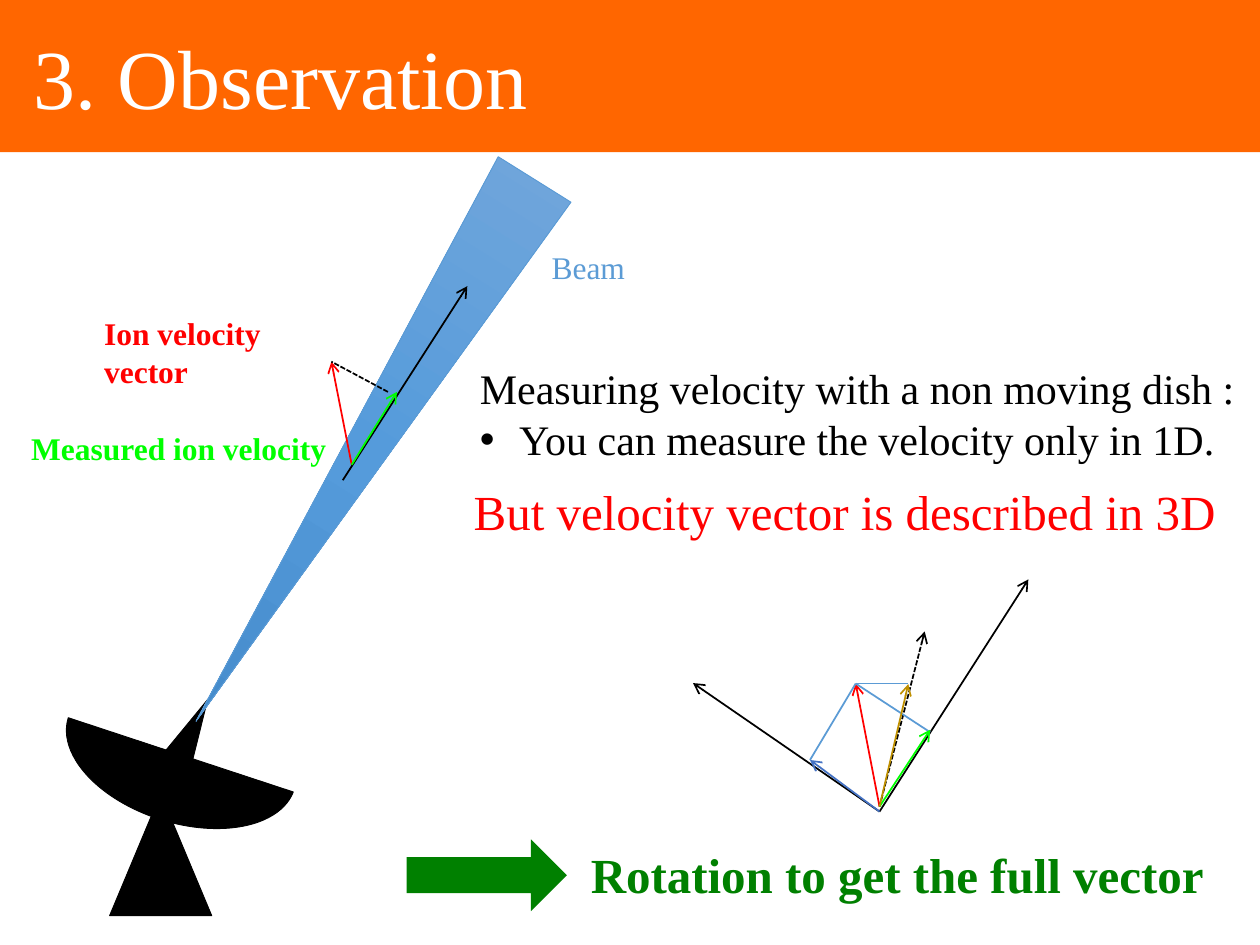
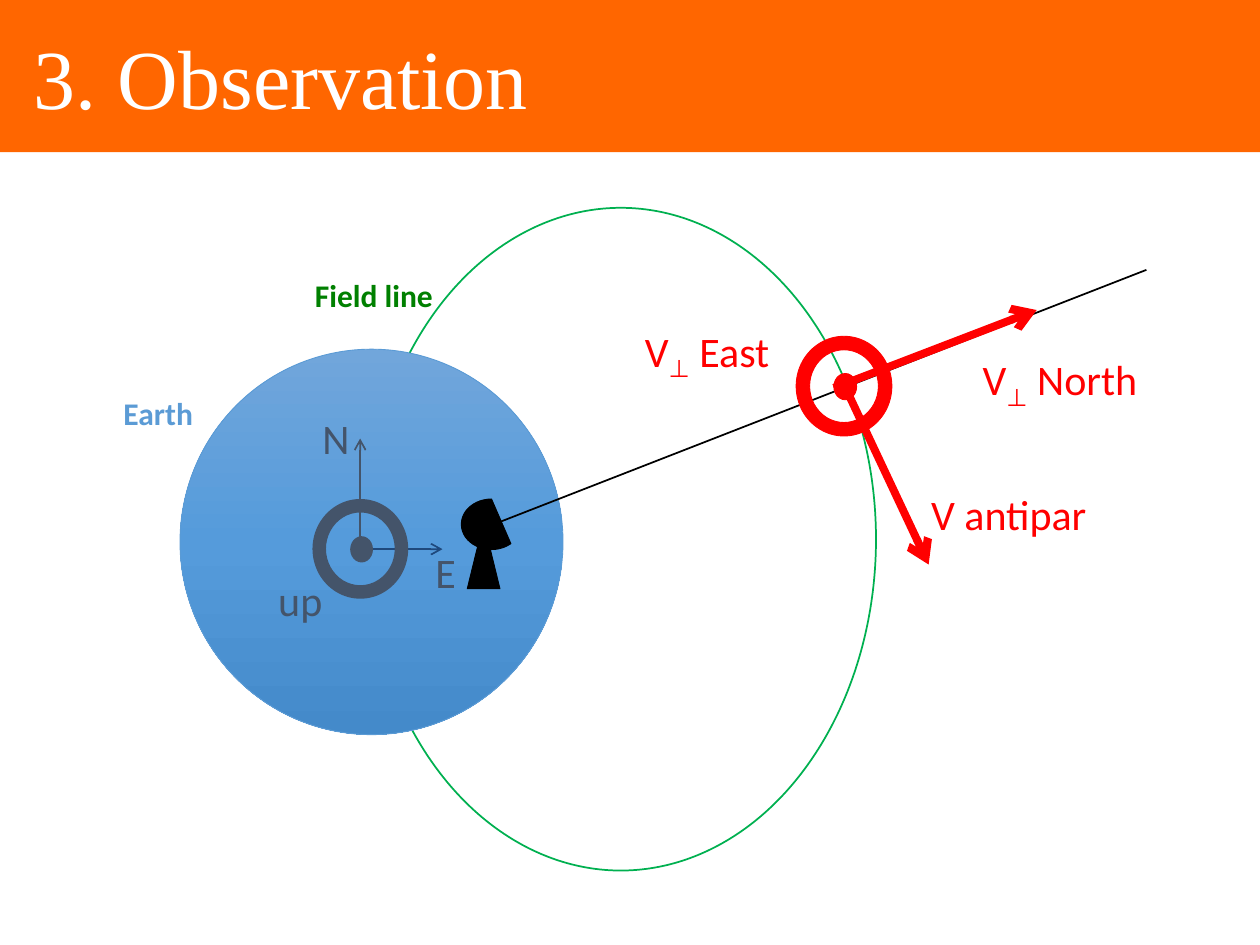
import copy

import pptx
import pptx.dml.color
import pptx.enum.dml
import pptx.enum.shapes
import pptx.enum.text
import pptx.oxml.ns
import pptx.util
from lxml import etree

Cm, Pt = pptx.util.Cm, pptx.util.Pt
Shape = pptx.enum.shapes.MSO_SHAPE
AutoSize = pptx.enum.text.MSO_AUTO_SIZE
qn = pptx.oxml.ns.qn

COLOURS = {
    "band": "FF6600", "white": "FFFFFF", "black": "000000",
    "red": "FF0000", "lime": "00FF00", "green": "008000",
    "field": "00B050", "sky": "5B9BD5", "gold": "BF9000",
    "blue": "4472C4", "slate": "44546A", "navy": "1F497D",
}
SKY_GRADIENT = ("71A6DB", "559BDB", "448ACA")
SERIF, SANS = "Times New Roman", "Calibri"


def rgb(colour):
    return pptx.dml.color.RGBColor.from_string(COLOURS.get(colour, colour))


def place(shape, left, top, width, height):
    shape.left, shape.top = Cm(left), Cm(top)
    shape.width, shape.height = Cm(width), Cm(height)


def set_font(paragraph, size, colour, face, bold=False):
    font = paragraph.font
    font.size, font.name, font.bold = Pt(size), face, bold
    font.color.rgb = rgb(colour)


def add_title(slide, text):
    """Title placeholder drawn as the full-width band."""
    title = slide.shapes.title
    place(title, 0, 0, 25.4, 3.07)
    title.fill.solid()
    title.fill.fore_color.rgb = rgb("band")
    frame = title.text_frame
    frame.text = text
    frame.margin_left = Cm(0.68)
    frame.auto_size = AutoSize.NONE
    frame.vertical_anchor = pptx.enum.text.MSO_ANCHOR.MIDDLE
    frame.paragraphs[0].alignment = pptx.enum.text.PP_ALIGN.LEFT
    set_font(frame.paragraphs[0], 48, "white", SERIF)


def add_list(slide, lead, points, box, size):
    """Body placeholder with an unbulleted lead line above its points."""
    body = slide.placeholders[1]
    place(body, *box)
    frame = body.text_frame
    frame.text = "\n".join([lead, *points])
    frame.auto_size = AutoSize.NONE
    for number, paragraph in enumerate(frame.paragraphs):
        indent = Cm(0.79) if number else 0
        properties = paragraph._p.get_or_add_pPr()
        properties.set("marL", str(indent))
        properties.set("indent", str(-indent))
        if not number:
            etree.SubElement(properties, qn("a:buNone"))
        paragraph.space_before = Pt(0)
        set_font(paragraph, size, "black", SERIF)


def add_label(slide, text, left, top, width, colour, size, face, bold=False):
    """One-line label; in a tuple every second part is a subscript."""
    height = Pt(size * 1.2) + Cm(0.25)
    box = slide.shapes.add_textbox(Cm(left), Cm(top), Cm(width), height)
    box.text_frame.word_wrap = False
    box.text_frame.auto_size = AutoSize.SHAPE_TO_FIT_TEXT
    paragraph = box.text_frame.paragraphs[0]
    parts = (text,) if isinstance(text, str) else text
    for number, part in enumerate(parts):
        run = paragraph.add_run()
        run.text = part
        if number % 2:
            run._r.get_or_add_rPr().set("baseline", "-25000")
    set_font(paragraph, size, colour, face, bold)


def add_figure(slide, kind, box, fill=None, outline=None, weight=0.5,
               rotation=0, adjustments=()):
    figure = slide.shapes.add_shape(kind, *(Cm(length) for length in box))
    figure.shadow.inherit = False
    figure.rotation = rotation
    for number, value in enumerate(adjustments):
        figure.adjustments[number] = value
    if fill == SKY_GRADIENT:
        fill_with_gradient(figure)
    elif fill:
        figure.fill.solid()
        figure.fill.fore_color.rgb = rgb(fill)
    else:
        figure.fill.background()
    if outline:
        figure.line.color.rgb = rgb(outline)
        figure.line.width = Pt(weight)
    else:
        figure.line.fill.background()


def fill_with_gradient(figure):
    figure.fill.gradient()
    figure.fill.gradient_angle = 270
    stops = figure._element.spPr.find(".//" + qn("a:gsLst"))
    stops.append(copy.deepcopy(stops[-1]))
    for number, stop in enumerate(figure.fill.gradient_stops):
        stop.position = number / 2
        stop.color.rgb = rgb(SKY_GRADIENT[number])


def add_line(slide, start, end, colour, arrow=False, dashed=False, weight=1):
    line = slide.shapes.add_connector(
        pptx.enum.shapes.MSO_CONNECTOR.STRAIGHT,
        *(Cm(length) for length in (*start, *end)))
    line.line.color.rgb = rgb(colour)
    line.line.width = Pt(weight)
    if dashed:
        line.line.dash_style = pptx.enum.dml.MSO_LINE.SQUARE_DOT
    if arrow:
        etree.SubElement(line.line._get_or_add_ln(), qn("a:tailEnd"), type="arrow")
    etree.SubElement(line._element.spPr, qn("a:effectLst"))


def add_outward_symbol(slide, left, top, colour, outline=None):
    """Ring and dot: a vector pointing out of the page."""
    add_figure(slide, Shape.DONUT, (left, top, 1.93, 2.01), colour, outline,
               adjustments=[0.141])
    add_figure(slide, Shape.OVAL, (left + 0.76, top + 0.75, 0.46, 0.53),
               colour, outline)


def build_dish_slide(slide):
    add_title(slide, "3. Observation")
    add_list(slide, "Measuring velocity with a non moving dish :",
             ["You can measure the velocity only in 1D."],
             (9.42, 7.19, 15.85, 2.31), 24)

    # Dish and beam
    add_figure(slide, Shape.ISOSCELES_TRIANGLE, (2.21, 16, 2.06, 2.46),
               "black", "black")
    add_figure(slide, Shape.ISOSCELES_TRIANGLE, (3.33, 14, 0.86, 1.9),
               "black", "black", rotation=26.7)
    add_figure(slide, Shape.CHORD, (2.26, 12.8, 2.79, 4.78), "black", "black",
               rotation=287.6, adjustments=[54.8, 162])
    add_figure(slide, Shape.FLOWCHART_MERGE, (6.5, 2.64, 1.73, 12.88),
               SKY_GRADIENT, "sky", rotation=32)

    # Ion velocity and its measured part along the beam
    ion, ion_tip = (7.09, 9.37), (6.68, 7.29)
    add_line(slide, ion, ion_tip, "red", arrow=True)
    add_line(slide, (6.91, 9.68), (9.42, 5.77), "black", arrow=True)
    add_line(slide, (7.82, 7.9), ion_tip, "black", dashed=True)
    add_line(slide, ion, (8, 7.9), "lime", arrow=True)
    add_label(slide, "Ion velocity vector", 1.85, 6.2, 5.5, "red", 18, SERIF, True)
    add_label(slide, "Beam", 10.87, 4.88, 2.01, "sky", 18, SERIF)
    add_label(slide, "Measured ion velocity", 0.38, 8.53, 6.53, "lime", 18, SERIF, True)

    # Vector split along three axes
    origin, axis_origin = (17.73, 16.26), (17.73, 16.36)
    vector_tip, left_tip = (17.25, 13.78), (16.33, 15.32)
    add_line(slide, origin, vector_tip, "red", arrow=True)
    for axis_tip in ((20.73, 11.68), (13.97, 13.77)):
        add_line(slide, axis_origin, axis_tip, "black", arrow=True)
    add_line(slide, origin, (18.64, 12.73), "black", arrow=True, dashed=True)
    for projection in (left_tip, (18.75, 14.76), (18.31, 13.78)):
        add_line(slide, vector_tip, projection, "sky")
    add_line(slide, origin, (18.75, 14.71), "lime", arrow=True)
    add_line(slide, origin, (18.31, 13.79), "gold", arrow=True)
    add_line(slide, axis_origin, left_tip, "blue", arrow=True)

    # Conclusion
    add_label(slide, "But velocity vector is described in 3D",
              9.3, 9.58, 15.62, "red", 28, SERIF)
    add_figure(slide, Shape.RIGHT_ARROW, (8.2, 16.92, 3.23, 1.45), "green")
    add_label(slide, "Rotation to get the full vector",
              11.66, 16.89, 13.23, "green", 28, SERIF, True)


def build_earth_slide(slide):
    add_title(slide, "3. Observation")

    # Field line, Earth and line of sight
    add_figure(slide, Shape.OVAL, (7.37, 4.19, 10.29, 13.36),
               outline="field", weight=1)
    add_figure(slide, Shape.OVAL, (3.63, 7.04, 7.72, 7.77), SKY_GRADIENT, "sky")
    add_figure(slide, Shape.CHORD, (9.3, 10.06, 1.22, 1.02), "black", "black")
    add_line(slide, (10.08, 10.52), (23.11, 5.44), "black")
    add_figure(slide, Shape.ISOSCELES_TRIANGLE, (9.42, 10.52, 0.66, 1.35),
               "black", "black")
    add_label(slide, "Field line", 6.1, 5.44, 2.9, "green", 18, SANS, True)
    add_label(slide, "Earth", 2.24, 7.82, 2, "sky", 18, SANS, True)

    # Local compass
    compass = (7.26, 11.07)
    add_line(slide, compass, (7.26, 8.84), "slate", arrow=True)
    add_line(slide, compass, (8.92, 11.07), "navy", arrow=True)
    add_outward_symbol(slide, 6.3, 10.06, "slate")
    for direction, left, top, width in (("N", 6.25, 8.2, 1.07),
                                        ("E", 8.53, 10.9, 0.94),
                                        ("up", 5.36, 11.46, 1.42)):
        add_label(slide, direction, left, top, width, "slate", 24, SANS)

    # Velocity components at the field line
    add_line(slide, (16.81, 7.82), (20.9, 6.25), "red", arrow=True, weight=4.5)
    add_outward_symbol(slide, 16.05, 6.78, "red", "red")
    add_line(slide, (16.99, 7.7), (18.72, 11.38), "red", arrow=True, weight=4.5)
    for component, left, top, width in (
            (("V", "⊥", " North"), 19.56, 7.01, 3.81),
            ("V antipar", 18.52, 9.73, 3.68),
            (("V", "⊥", " East"), 12.75, 6.43, 3.2)):
        add_label(slide, component, left, top, width, "red", 24, SANS)


def main():
    deck = pptx.Presentation()
    deck.slide_width, deck.slide_height = Cm(25.4), Cm(19.05)
    title_and_content, title_only = deck.slide_layouts[1], deck.slide_layouts[5]
    build_dish_slide(deck.slides.add_slide(title_and_content))
    build_earth_slide(deck.slides.add_slide(title_only))
    deck.save("out.pptx")


if __name__ == "__main__":
    main()
